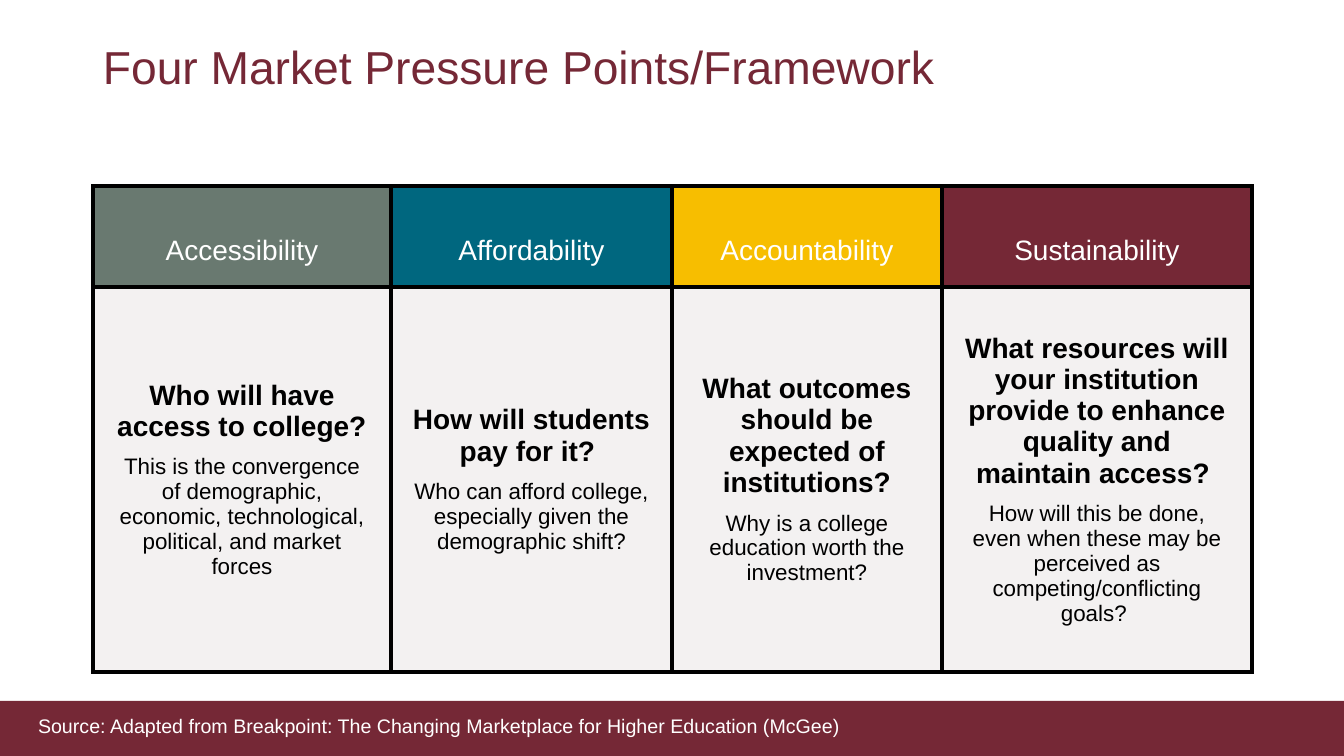
from lxml import etree
from pptx import Presentation
from pptx import util as u
from pptx.dml.color import RGBColor
from pptx.enum import shapes, text
from pptx.oxml.ns import qn

MAROON = RGBColor(0x75, 0x28, 0x36)
SAGE = RGBColor(0x69, 0x79, 0x70)
TEAL = RGBColor(0x00, 0x67, 0x7F)
GOLD = RGBColor(0xF7, 0xBE, 0x00)
PALE = RGBColor(0xF3, 0xF1, 0xF1)
WHITE = RGBColor(0xFF, 0xFF, 0xFF)
BLACK = RGBColor(0x00, 0x00, 0x00)

PRESSURE_POINTS = [
    ("Accessibility", SAGE, 298, "Who will have access to college? ",
     "This is the convergence of demographic, economic, technological, political, and market forces"),
    ("Affordability", TEAL, 281, "How will students pay for it? ",
     "Who can afford college, especially given the demographic shift?"),
    ("Accountability", GOLD, 270, "What outcomes should be expected of institutions?",
     "Why is a college education worth the investment?"),
    ("Sustainability", MAROON, 310,
     "What resources will your institution provide to enhance quality and maintain access? ",
     "How will this be done, even when these may be perceived as competing/conflicting goals? "),
]


def px(length):
    """Turn whole pixels into EMU."""
    return u.Emu(round(length * 914400 / 100.8))


class SlideBuilder:
    """Hold the style and the current slide."""

    font_name = "Arial"
    cell_margin = 21
    border_width = u.Pt(3)

    def __init__(self, presentation):
        self.slide = presentation.slides.add_slide(presentation.slide_layouts[6])

    def set_values(self, target, values):
        """Set each named attribute on the target."""
        for name, value in values.items():
            setattr(target, name, value)

    def add_words(self, paragraph, words, size, color, bold=False, **layout):
        """Fill a paragraph with one styled run."""
        self.set_values(paragraph, layout)
        run = paragraph.add_run()
        run.text = words
        self.set_values(run.font, {"name": self.font_name, "size": u.Pt(size), "bold": bold})
        run.font.color.rgb = color

    def band(self, left, top, width, height, color):
        """Draw a plain filled rectangle."""
        shape = self.slide.shapes.add_shape(
            shapes.MSO_SHAPE.RECTANGLE, px(left), px(top), px(width), px(height))
        shape.shadow.inherit = False
        shape.fill.solid()
        shape.fill.fore_color.rgb = color
        shape.line.fill.background()

    def label(self, left, top, width, height, words, size, color, spacing, frame_values):
        """Add a one-paragraph text box."""
        box = self.slide.shapes.add_textbox(px(left), px(top), px(width), px(height))
        self.set_values(box.text_frame, {"word_wrap": True, **frame_values})
        self.add_words(box.text_frame.paragraphs[0], words, size, color, line_spacing=spacing)

    def style_cell(self, cell, color):
        """Give a cell its margins, borders and fill."""
        sides = ("left", "right", "top", "bottom")
        self.set_values(cell, {f"margin_{side}": px(self.cell_margin) for side in sides})
        cell.vertical_anchor = text.MSO_ANCHOR.MIDDLE
        properties = cell._tc.get_or_add_tcPr()
        for side in sides:
            line = etree.SubElement(
                properties, qn(f"a:ln{side[0].upper()}"), w=str(self.border_width))
            fill = etree.SubElement(line, qn("a:solidFill"))
            etree.SubElement(fill, qn("a:srgbClr"), val=str(BLACK))
        cell.fill.solid()
        cell.fill.fore_color.rgb = color

    def pressure_table(self, left, top, row_heights, points):
        """Build the table with one column per pressure point."""
        width = sum(point[2] for point in points)
        table = self.slide.shapes.add_table(
            len(row_heights), len(points), px(left), px(top), px(width), px(sum(row_heights))).table
        for row, height in zip(table.rows, row_heights):
            row.height = px(height)
        centered = {"alignment": text.PP_ALIGN.CENTER}
        for index, (name, color, column_width, question, detail) in enumerate(points):
            table.columns[index].width = px(column_width)
            header, body = table.cell(0, index), table.cell(1, index)
            self.style_cell(header, color)
            self.style_cell(body, PALE)
            self.add_words(header.text_frame.paragraphs[0], name, 20, WHITE,
                           line_spacing=u.Pt(42), **centered)
            self.add_words(body.text_frame.paragraphs[0], question, 20, BLACK, True, **centered)
            self.add_words(body.text_frame.add_paragraph(), detail, 16, BLACK,
                           space_before=u.Pt(9), **centered)


def main():
    """Build and save the slide."""
    presentation = Presentation()
    presentation.slide_width, presentation.slide_height = px(1344), px(756)
    builder = SlideBuilder(presentation)
    builder.band(0, 701, 1344, 55, MAROON)
    no_margins = {f"margin_{side}": 0 for side in ("left", "right", "top", "bottom")}
    builder.label(38, 720, 989, 19,
                  "Source: Adapted from Breakpoint: The Changing Marketplace for Higher Education (McGee)",
                  14, WHITE, u.Pt(12.7), no_margins)
    builder.label(93, 40, 1159, 146, "Four Market Pressure Points/Framework",
                  33, MAROON, 0.9, {})
    builder.pressure_table(93, 186, (101, 385), PRESSURE_POINTS)
    presentation.save("out.pptx")


if __name__ == "__main__":
    main()
